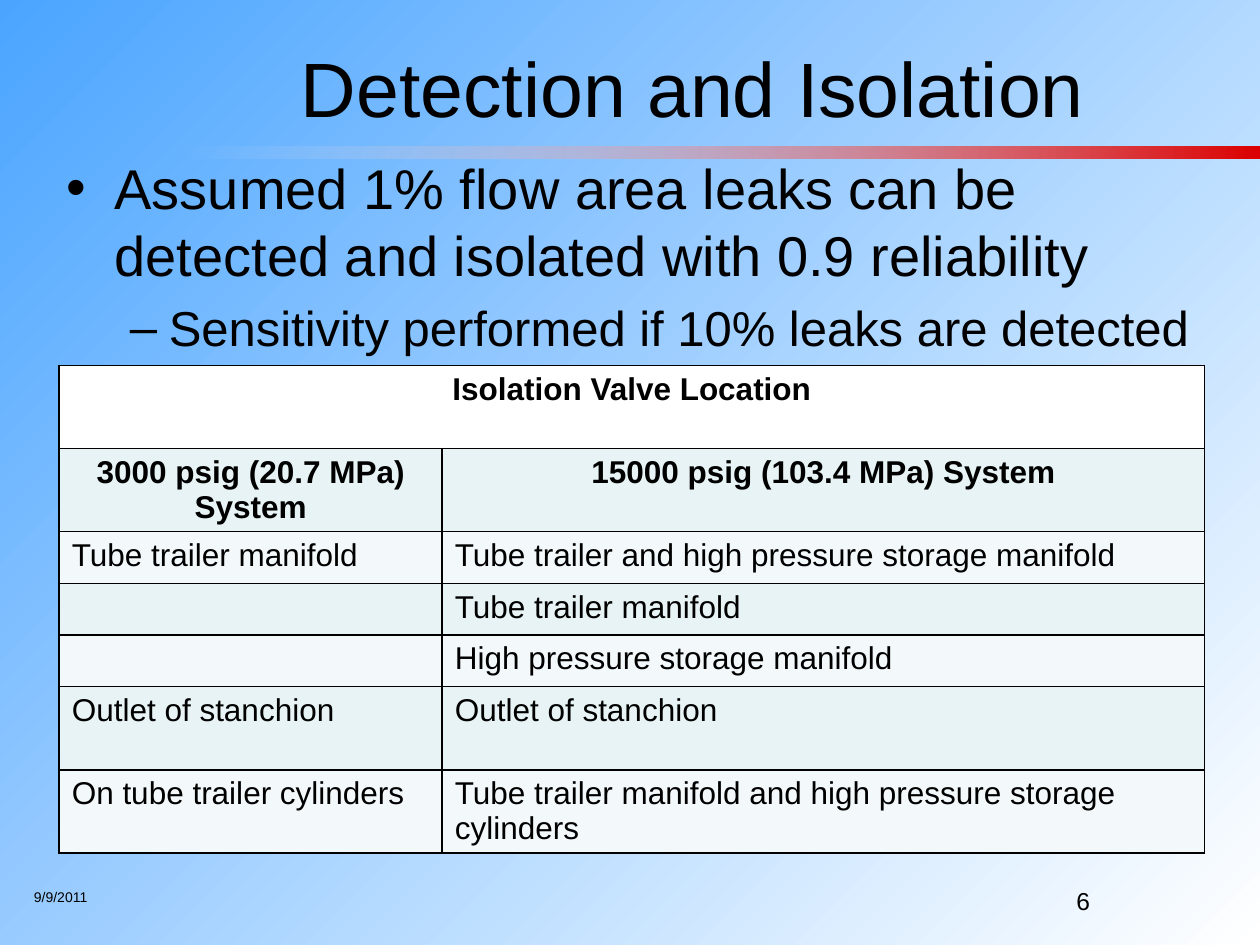
from lxml import etree
from pptx import Presentation
from pptx.dml.color import RGBColor
from pptx.enum.shapes import MSO_SHAPE
from pptx.enum.text import MSO_ANCHOR, MSO_AUTO_SIZE, PP_ALIGN
from pptx.oxml.ns import qn
from pptx.util import Inches, Pt

RECT = MSO_SHAPE.RECTANGLE
TOP = MSO_ANCHOR.TOP
FIXED = MSO_AUTO_SIZE.NONE
LEFT, MID, RIGHT = PP_ALIGN.LEFT, PP_ALIGN.CENTER, PP_ALIGN.RIGHT
BLACK, WHITE = "000000", "FFFFFF"
BANDS = ["F3F9FA", "E7F3F4"]

ROWS = [
    ("Isolation Valve Location", ""),
    ("3000 psig (20.7 MPa) System", "15000 psig (103.4 MPa) System"),
    ("Tube trailer manifold", "Tube trailer and high pressure storage manifold"),
    ("", "Tube trailer manifold"),
    ("", "High pressure storage manifold"),
    ("Outlet of stanchion", "Outlet of stanchion"),
    ("On tube trailer cylinders",
     "Tube trailer manifold and high pressure storage cylinders"),
]
TALL, LOW = 0.66, 0.41
HEIGHTS = [TALL, TALL, LOW, LOW, LOW, TALL, TALL]
WIDTHS = [3.04, 6.05]


def color(text):
    return RGBColor.from_string(text)


def apply(target, values):
    for name, value in values.items():
        setattr(target, name, value)


class Deck:
    face = "Arial"

    def __init__(self, slide):
        self.slide = slide

    def place(self, shape, box):
        names = ("left", "top", "width", "height")
        apply(shape, dict(zip(names, map(Inches, box))))

    def style(self, para, size, align=LEFT, bold=False):
        para.alignment = align
        apply(para.font, {"name": self.face, "size": Pt(size), "bold": bold})
        para.font.color.rgb = color(BLACK)

    def fade(self, fill, first, last, angle):
        fill.gradient()
        fill.gradient_angle = angle
        for stop, tone, spot in zip(fill.gradient_stops, (first, last), (0, 1)):
            stop.color.rgb = color(tone)
            stop.position = spot

    def bar(self, box, first, last):
        shape = self.slide.shapes.add_shape(RECT, *map(Inches, box))
        shape.shadow.inherit = False
        shape.line.fill.background()
        self.fade(shape.fill, first, last, 0)
        # The left end is fully clear
        tone = next(shape.element.iter(qn("a:srgbClr")))
        etree.SubElement(tone, qn("a:alpha"), val="0")

    def title(self, text, box):
        shape = self.slide.shapes.title
        self.place(shape, box)
        frame = shape.text_frame
        frame.text = text
        apply(frame, {"vertical_anchor": TOP, "auto_size": FIXED,
                      "margin_top": Inches(0.05)})
        self.style(frame.paragraphs[0], 44, MID)

    def body(self, items, box):
        shape = self.slide.placeholders[1]
        self.place(shape, box)
        frame = shape.text_frame
        apply(frame, {"vertical_anchor": TOP, "auto_size": FIXED,
                      "margin_top": Inches(0.06)})
        frame.text = "\n".join(item[0] for item in items)
        for para, (_, level, size, mark, edge, hang, gap) in zip(
                frame.paragraphs, items):
            apply(para, {"level": level, "line_spacing": 1.0,
                         "space_before": Pt(gap)})
            props = para._p.get_or_add_pPr()
            props.set("marL", str(Inches(edge)))
            props.set("indent", str(Inches(-hang)))
            etree.SubElement(props, qn("a:buFont"), typeface=self.face)
            etree.SubElement(props, qn("a:buChar"), char=mark)
            self.style(para, size)

    def note(self, text, box, size, align=LEFT):
        frame = self.slide.shapes.add_textbox(*map(Inches, box)).text_frame
        frame.word_wrap = True
        frame.text = text
        self.style(frame.paragraphs[0], size, align)

    def edge(self, cell):
        props = cell._tc.get_or_add_tcPr()
        for spot, side in enumerate(("lnL", "lnR", "lnT", "lnB")):
            line = etree.Element(qn("a:" + side), w=str(Pt(1)))
            fill = etree.SubElement(line, qn("a:solidFill"))
            etree.SubElement(fill, qn("a:srgbClr"), val=BLACK)
            props.insert(spot, line)

    def table(self, rows, left, top):
        frame = self.slide.shapes.add_table(
            len(rows), len(WIDTHS), Inches(left), Inches(top),
            Inches(sum(WIDTHS)), Inches(sum(HEIGHTS)))
        grid = frame.table
        for col, width in zip(grid.columns, WIDTHS):
            col.width = Inches(width)
        for row, height in zip(grid.rows, HEIGHTS):
            row.height = Inches(height)
        grid.cell(0, 0).merge(grid.cell(0, 1))
        for r, row in enumerate(rows):
            head = r < 2
            for c, text in enumerate(row):
                cell = grid.cell(r, c)
                cell.fill.solid()
                cell.fill.fore_color.rgb = color(BANDS[r % 2] if r else WHITE)
                self.edge(cell)
                cell.text = text
                self.style(cell.text_frame.paragraphs[0], 18,
                           MID if head else LEFT, head)


def main():
    show = Presentation()
    apply(show, {"slide_width": Inches(10), "slide_height": Inches(7.5)})
    slide = show.slides.add_slide(show.slide_layouts[1])
    deck = Deck(slide)

    # Background and red rule
    deck.fade(slide.background.fill, "4BA5FF", WHITE, 315)
    deck.bar((1.35, 1.16, 8.65, 0.1), WHITE, "DC0000")

    # Title and list
    deck.title("Detection and Isolation", (1, 0.27, 9, 1.25))
    deck.body([
        ("Assumed 1% flow area leaks can be detected and isolated "
         "with 0.9 reliability", 0, 32, "•", 0.38, 0.38, 0),
        ("Sensitivity performed if 10% leaks are detected",
         1, 28, "–", 0.81, 0.31, 5.6),
    ], (0.43, 1.16, 9.3, 5.35))

    # Valve table
    deck.table(ROWS, 0.47, 2.9)

    # Date and page number
    deck.note("9/9/2011", (0.17, 7, 0.92, 0.25), 8)
    deck.note("6", (6.42, 6.98, 2.33, 0.52), 14, RIGHT)

    show.save("out.pptx")


if __name__ == "__main__":
    main()
